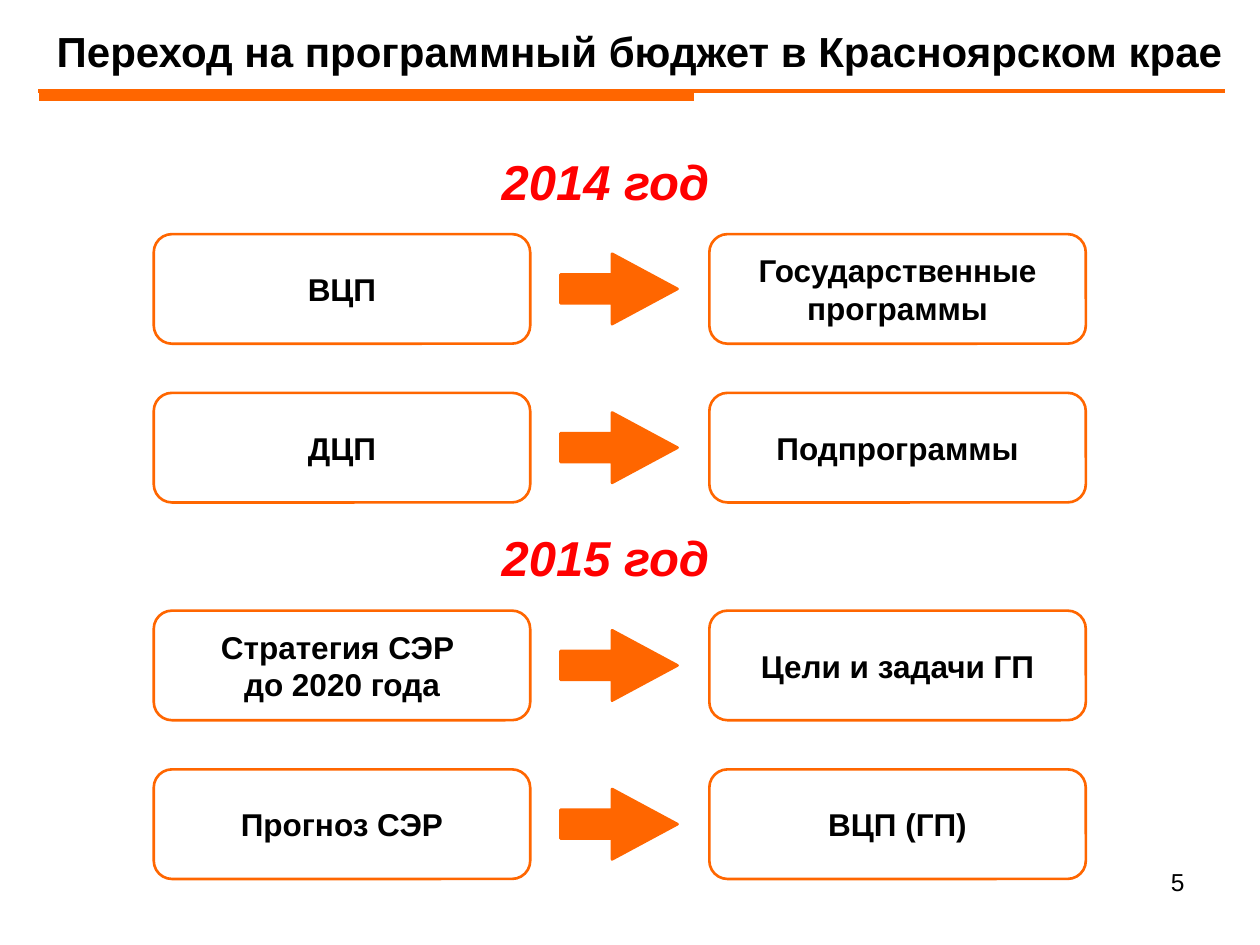
import pptx
import pptx.dml.color
import pptx.enum.shapes
import pptx.enum.text
import pptx.oxml
import pptx.util
from pptx.util import Cm

SHAPES = pptx.enum.shapes.MSO_SHAPE
ALIGN = pptx.enum.text.PP_ALIGN
ANCHOR = pptx.enum.text.MSO_ANCHOR

ORANGE, RED, BLACK = "FF6600", "FF0000", "000000"
TITLE_FONT = {"size": pptx.util.Pt(24), "bold": True}
YEAR_FONT = {"size": pptx.util.Pt(28), "bold": True, "italic": True}
BOX_FONT = {"size": pptx.util.Pt(18), "bold": True}
NUMBER_FONT = {"size": pptx.util.Pt(14), "bold": False}

YEARS = [
    ("2014 год", [("ВЦП", "Государственные программы"),
                  ("ДЦП", "Подпрограммы")]),
    ("2015 год", [("Стратегия СЭР \vдо 2020 года", "Цели и задачи ГП"),
                  ("Прогноз СЭР", "ВЦП (ГП)")]),
]
YEAR_TOP, YEAR_STEP = 2.92, 7.59
FIRST_ROW, ROW_STEP = 1.8, 3.2
BEFORE_LEFT, ARROW_LEFT, AFTER_LEFT = 3.1, 11.3, 14.3
BOX_WIDTH, BOX_HEIGHT = 7.59, 2.21
ARROW_WIDTH, ARROW_HEIGHT = 2.36, 1.42


def color(hex_string):
    return pptx.dml.color.RGBColor.from_string(hex_string)


def write(frame, wording, font_format, hex_color, align, anchor=ANCHOR.TOP):
    frame.word_wrap = True
    frame.vertical_anchor = anchor
    paragraph = frame.paragraphs[0]
    paragraph.text = wording
    paragraph.alignment = align
    for run in paragraph.runs:
        for name, value in {"name": "Arial", **font_format}.items():
            setattr(run.font, name, value)
        run.font.color.rgb = color(hex_color)


def outline(shape, width):
    shape.line.color.rgb = color(ORANGE)
    shape.line.width = pptx.util.Pt(width)


def add_title(slide, wording):
    title = slide.shapes.title
    place = {"left": 0.89, "top": 0.33, "width": 24.51, "height": 1.4}
    for name, value in place.items():
        setattr(title, name, Cm(value))
    write(title.text_frame, wording, TITLE_FONT, BLACK, ALIGN.LEFT, ANCHOR.MIDDLE)


def add_rule(group, left, right, top, width):
    rule = group.shapes.add_connector(
        pptx.enum.shapes.MSO_CONNECTOR.STRAIGHT, Cm(left), Cm(top), Cm(right), Cm(top))
    outline(rule, width)
    rule._element.spPr.append(pptx.oxml.parse_xml(
        '<a:effectLst xmlns:a="http://schemas.openxmlformats.org/drawingml/2006/main"/>'))


def add_label(slide, wording, left, top, width, height, font_format, hex_color, align):
    label = slide.shapes.add_textbox(Cm(left), Cm(top), Cm(width), Cm(height))
    write(label.text_frame, wording, font_format, hex_color, align)


def add_box(slide, wording, left, top):
    box = slide.shapes.add_shape(
        SHAPES.ROUNDED_RECTANGLE, Cm(left), Cm(top), Cm(BOX_WIDTH), Cm(BOX_HEIGHT))
    box.shadow.inherit = False
    box.fill.background()
    outline(box, 1.5)
    for side in ("left", "top", "right", "bottom"):
        setattr(box.text_frame, f"margin_{side}", 0)
    write(box.text_frame, wording, BOX_FONT, BLACK, ALIGN.CENTER, ANCHOR.MIDDLE)


def add_arrow(slide, row_top):
    top = row_top + (BOX_HEIGHT - ARROW_HEIGHT) / 2
    arrow = slide.shapes.add_shape(
        SHAPES.RIGHT_ARROW, Cm(ARROW_LEFT), Cm(top), Cm(ARROW_WIDTH), Cm(ARROW_HEIGHT))
    arrow.shadow.inherit = False
    arrow.adjustments[0] = 0.41
    arrow.adjustments[1] = 0.93
    arrow.fill.solid()
    arrow.fill.fore_color.rgb = color(ORANGE)
    outline(arrow, 1.5)


def add_year(slide, year, transitions, top):
    add_label(slide, year, 9.5, top, 5.41, 1.45, YEAR_FONT, RED, ALIGN.CENTER)
    for row, (before, after) in enumerate(transitions):
        row_top = top + FIRST_ROW + row * ROW_STEP
        add_box(slide, before, BEFORE_LEFT, row_top)
        add_arrow(slide, row_top)
        add_box(slide, after, AFTER_LEFT, row_top)


def main():
    deck = pptx.Presentation()
    deck.slide_width, deck.slide_height = Cm(25.4), Cm(19.05)
    slide = deck.slides.add_slide(deck.slide_layouts[5])

    add_title(slide, "Переход на программный бюджет в Красноярском крае")
    title_rules = slide.shapes.add_group_shape()
    add_rule(title_rules, 0.78, 14, 1.93, 6)
    add_rule(title_rules, 0.77, 24.69, 1.83, 2.25)

    for index, (year, transitions) in enumerate(YEARS):
        add_year(slide, year, transitions, YEAR_TOP + index * YEAR_STEP)

    add_label(slide, "5", 18.2, 17.35, 5.93, 1.32, NUMBER_FONT, BLACK, ALIGN.RIGHT)
    deck.save("out.pptx")


if __name__ == "__main__":
    main()
